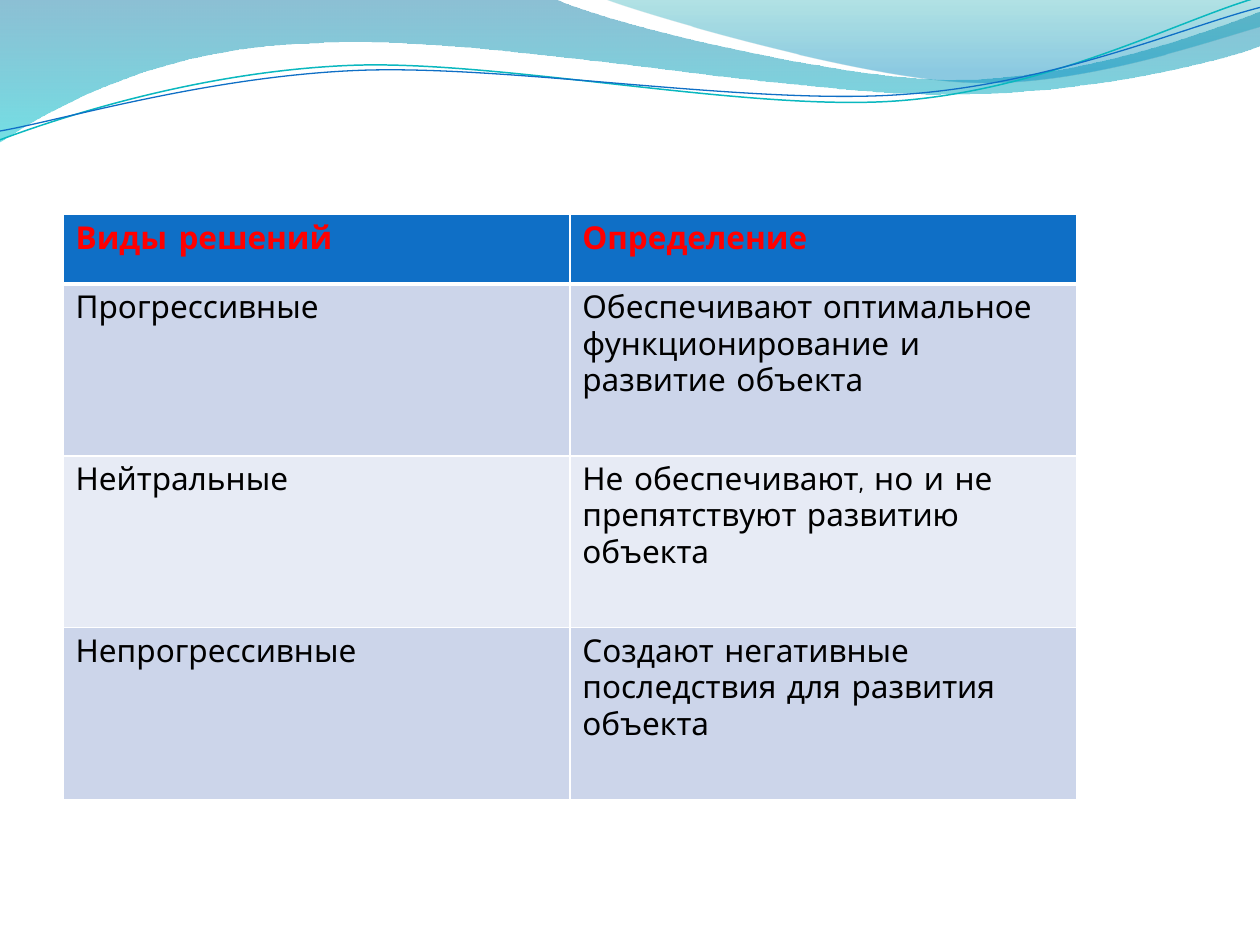
from math import cos, radians, sin
from typing import NamedTuple

from lxml.etree import SubElement
from pptx import Presentation
from pptx.dml.color import RGBColor
from pptx.oxml.ns import qn
from pptx.util import Pt

Point = tuple[float, float]
FONT = "Comic Neue"


class Stop(NamedTuple):
    position: float
    colour: str
    opacity: int  # percent


class Wave(NamedTuple):
    start: Point
    segments: list[tuple[Point, ...]]  # one point: straight; three: Bézier
    stops: tuple[Stop, ...] = ()
    line_colour: str = ""
    line_width: float = 0
    rotation: float = 0


class Row(NamedTuple):
    kind: str
    definition: str
    height: float
    fill: str
    colour: str = "000000"
    header: bool = False


WAVES = [
    # Wide wave along the top
    Wave((0, 0), [
        ((316.8, -0.7),),
        ((342.7, 12.2), (478, 45.4), (545.8, 45.4)),
        ((614.2, 45.4), (689.8, 18.7), (720, 6.5)),
        ((720.7, 25.9),),
        ((707.8, 31.7), (626.4, 54.7), (537.1, 54)),
        ((447.8, 54), (275, 20.2), (185, 24.5)),
        ((92.9, 25.9), (33.1, 59.8), (-0.7, 81.4)),
        ((0, 0),),
    ], stops=(Stop(0, "0074A1", 45), Stop(1, "00C6CF", 55))),
    # Right-hand wave
    Wave((344.9, -0.7), [
        ((366.5, 7.9), (491, 44.6), (553.7, 46.8)),
        ((616.3, 49.7), (691.9, 23), (720, 15.1)),
        ((720, 0),),
        ((344.9, -0.7),),
    ], stops=(Stop(0, "00A1A9", 30), Stop(0.8, "008BBF", 45))),
    # Thin crossing lines
    Wave((0, 79.9), [
        ((34.6, 67), (113.8, 41), (199.4, 37.4)),
        ((284.4, 33.8), (427, 64.1), (513.4, 57.6)),
        ((599.8, 51.1), (675.4, 10.8), (718.6, -1.4)),
    ], line_colour="0AB8BF", line_width=0.85, rotation=357.3),
    Wave((0, 74.9), [
        ((33.8, 69.1), (118.1, 43.9), (203.8, 40.3)),
        ((290.2, 36.7), (429.8, 60.5), (516.2, 54)),
        ((601.9, 48.2), (677.5, 15.1), (720, 4.3)),
    ], line_colour="0F6FC6", line_width=0.75, rotation=357.3),
]

ROWS = [
    Row("Виды решений", "Определение", 39.6, "0F6FC6", "FF0000", True),
    Row("Прогрессивные",
        "Обеспечивают оптимальное функционирование и развитие объекта",
        98.2, "CCD5EA"),
    Row("Нейтральные",
        "Не обеспечивают, но и не препятствуют развитию объекта",
        98.2, "E7EBF5"),
    Row("Непрогрессивные",
        "Создают негативные последствия для развития объекта",
        98.2, "CCD5EA"),
]


def rgb(colour: str) -> RGBColor:
    return RGBColor.from_string(colour)


def turn(point: Point, degrees: float) -> Point:
    """Rotate a point clockwise about the slide's top left corner."""
    (x, y), angle = point, radians(degrees)
    return (x * cos(angle) - y * sin(angle), x * sin(angle) + y * cos(angle))


def bend(ribbon, segments: list[tuple[Point, ...]]) -> None:
    """Join each three straight steps of a curved segment into one Bézier."""
    steps = iter(list(ribbon.element.iter(qn("a:lnTo"))))
    for segment in segments:
        controls = [next(steps) for _ in segment]
        if len(controls) == 1:
            continue
        curve = controls[0].makeelement(qn("a:cubicBezTo"))
        controls[0].addprevious(curve)
        for control in controls:
            curve.append(control[0])
            control.getparent().remove(control)


def draw_wave(slide, wave: Wave) -> None:
    corners = [wave.start, *(p for segment in wave.segments for p in segment)]
    level = [turn(corner, -wave.rotation) for corner in corners]
    first, *rest = [(Pt(x), Pt(y)) for x, y in level]
    builder = slide.shapes.build_freeform(*first)
    builder.add_line_segments(rest, close=bool(wave.stops))
    ribbon = builder.convert_to_shape()
    bend(ribbon, wave.segments)
    ribbon.shadow.inherit = False

    # Turn the level shape about its own centre
    centre = (ribbon.left + ribbon.width / 2, ribbon.top + ribbon.height / 2)
    centre_x, centre_y = turn(centre, wave.rotation)
    ribbon.left = round(centre_x - ribbon.width / 2)
    ribbon.top = round(centre_y - ribbon.height / 2)
    ribbon.rotation = wave.rotation

    if not wave.stops:
        ribbon.fill.background()
        ribbon.line.color.rgb = rgb(wave.line_colour)
        ribbon.line.width = Pt(wave.line_width)
        return
    ribbon.line.fill.background()
    ribbon.fill.gradient()
    ribbon.fill.gradient_angle = 270
    for target, stop in zip(ribbon.fill.gradient_stops, wave.stops):
        target.position = stop.position
        target.color.rgb = rgb(stop.colour)
    for colour, stop in zip(ribbon.element.iter(qn("a:srgbClr")), wave.stops):
        SubElement(colour, qn("a:alpha"), val=str(stop.opacity * 1000))


def add_borders(cell, widths: dict[str, float]) -> None:
    properties = cell._tc.get_or_add_tcPr()
    for side, width in widths.items():
        border = SubElement(properties, qn(f"a:{side}"), w=str(Pt(width)))
        fill = SubElement(border, qn("a:solidFill"))
        SubElement(fill, qn("a:srgbClr"), val="FFFFFF")


def draw_table(slide, rows: list[Row]) -> None:
    height = sum(row.height for row in rows)
    table = slide.shapes.add_table(
        len(rows), 2, Pt(36), Pt(122.7), Pt(579.2), Pt(height)).table
    for index, row in enumerate(rows):
        table.rows[index].height = Pt(row.height)
        top = 3 if index == 1 else 1
        bottom = 3 if row.header else 1
        for cell, wording in zip(table.rows[index].cells,
                                 (row.kind, row.definition)):
            add_borders(cell, {"lnL": 1, "lnR": 1, "lnT": top, "lnB": bottom})
            cell.fill.solid()
            cell.fill.fore_color.rgb = rgb(row.fill)
            cell.text = wording
            font = cell.text_frame.paragraphs[0].font
            font.name = FONT
            font.size = Pt(18)
            font.bold = row.header
            font.color.rgb = rgb(row.colour)


def main() -> None:
    deck = Presentation()
    deck.slide_width, deck.slide_height = Pt(720), Pt(540)
    slide = deck.slides.add_slide(deck.slide_layouts[6])
    for wave in WAVES:
        draw_wave(slide, wave)
    draw_table(slide, ROWS)
    deck.save("out.pptx")


if __name__ == "__main__":
    main()
